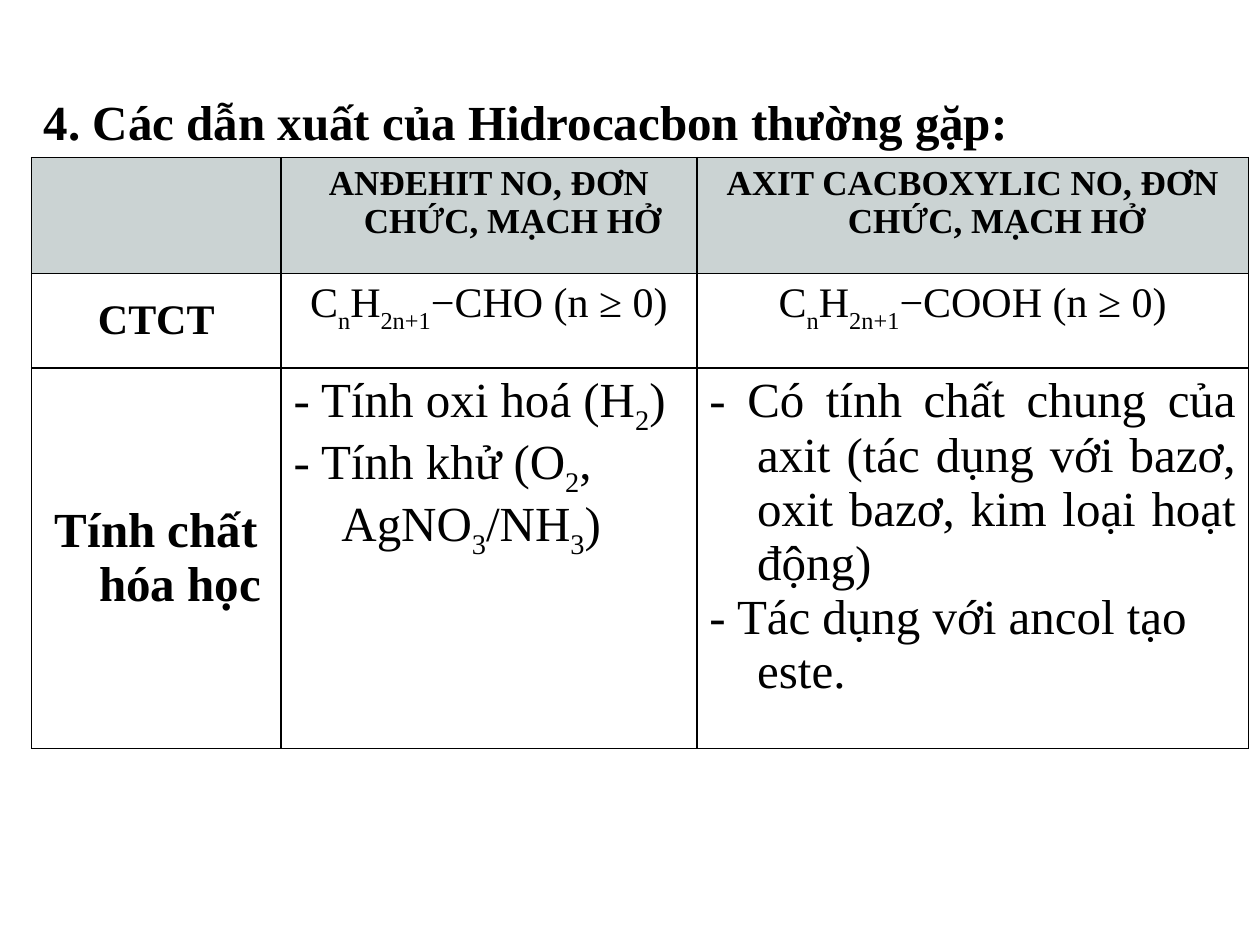
from lxml import etree
from pptx import Presentation
from pptx.dml.color import RGBColor
from pptx.enum.text import MSO_ANCHOR, MSO_AUTO_SIZE, PP_ALIGN
from pptx.oxml.ns import qn
from pptx.util import Inches, Pt

LEFT, CENTER, JUSTIFY = PP_ALIGN.LEFT, PP_ALIGN.CENTER, PP_ALIGN.JUSTIFY
TOP, MIDDLE = MSO_ANCHOR.TOP, MSO_ANCHOR.MIDDLE
FIT_SHAPE = MSO_AUTO_SIZE.SHAPE_TO_FIT_TEXT
FONT = "Times New Roman"
BLACK, HEADER_FILL = "000000", "CBD3D3"
HANGING = Inches(0.38)
COLUMN_WIDTHS = [1.98, 3.3, 4.38]
ROW_HEIGHTS = [0.92, 0.75, 3.02]
ROW_SIZES = [20, 24, 28]
ROW_SUBSCRIPTS = [0, -30, -25]

# Within a line, "|" switches between normal text and subscript.
ROWS = [
    [
        [],
        [(CENTER, "ANĐEHIT NO, ĐƠN CHỨC, MẠCH HỞ")],
        [(CENTER, "AXIT CACBOXYLIC NO, ĐƠN CHỨC, MẠCH HỞ")],
    ],
    [
        [(CENTER, "CTCT")],
        [(CENTER, "C|n|H|2n+1|−CHO (n ≥ 0)")],
        [(CENTER, "C|n|H|2n+1|−COOH (n ≥ 0)")],
    ],
    [
        [(CENTER, "Tính chất hóa học")],
        [
            (LEFT, "- Tính oxi hoá (H|2|)"),
            (LEFT, "- Tính khử (O|2|, AgNO|3|/NH|3|)"),
        ],
        [
            (JUSTIFY, "- Có tính chất chung của axit (tác dụng với bazơ, "
                      "oxit bazơ, kim loại hoạt động)"),
            (LEFT, "- Tác dụng với ancol tạo este."),
        ],
    ],
]


def color(value):
    return RGBColor.from_string(value)


def add_run(paragraph, text, size, bold, baseline=0):
    run = paragraph.add_run()
    run.text = text
    font = run.font
    font.name, font.size, font.bold = FONT, Pt(size), bold
    font.color.rgb = color(BLACK)
    if baseline:
        font._element.set("baseline", str(baseline * 1000))


def add_heading(slide, text):
    heading = slide.shapes.add_textbox(
        Inches(0.25), Inches(0.68), Inches(8.92), Inches(0.57))
    frame = heading.text_frame
    frame.word_wrap = True
    frame.auto_size = FIT_SHAPE
    add_run(frame.paragraphs[0], text, 28, True)


def set_borders(cell):
    properties = cell._tc.get_or_add_tcPr()
    for position, side in enumerate(("lnL", "lnR", "lnT", "lnB")):
        line = etree.Element(qn(f"a:{side}"), w=str(Pt(1)))
        fill = etree.SubElement(line, qn("a:solidFill"))
        etree.SubElement(fill, qn("a:srgbClr"), val=BLACK)
        properties.insert(position, line)


def fill_cell(cell, lines, size, bold, subscript):
    frame = cell.text_frame
    for index, (alignment, text) in enumerate(lines):
        paragraph = frame.add_paragraph() if index else frame.paragraphs[0]
        paragraph.alignment = alignment
        properties = paragraph._p.get_or_add_pPr()
        properties.set("marL", str(HANGING))
        properties.set("indent", str(-HANGING))
        for part, piece in enumerate(text.split("|")):
            add_run(paragraph, piece, size, bold, subscript * (part % 2))


def add_comparison_table(slide):
    table = slide.shapes.add_table(
        len(ROWS), len(COLUMN_WIDTHS), Inches(0.25), Inches(1.25),
        Inches(sum(COLUMN_WIDTHS)), Inches(sum(ROW_HEIGHTS))).table
    table.horz_banding = False
    for column, width in zip(table.columns, COLUMN_WIDTHS):
        column.width = Inches(width)
    for row_index, row in enumerate(ROWS):
        table.rows[row_index].height = Inches(ROW_HEIGHTS[row_index])
        for column_index, lines in enumerate(row):
            cell = table.cell(row_index, column_index)
            is_header, is_label = row_index == 0, column_index == 0
            if is_header:
                cell.fill.solid()
                cell.fill.fore_color.rgb = color(HEADER_FILL)
            else:
                cell.fill.background()
            cell.vertical_anchor = MIDDLE if is_label and lines else TOP
            fill_cell(cell, lines, ROW_SIZES[row_index],
                      is_header or is_label, ROW_SUBSCRIPTS[row_index])
            set_borders(cell)


def main():
    presentation = Presentation()
    presentation.slide_width = Inches(10)
    presentation.slide_height = Inches(7.5)
    slide = presentation.slides.add_slide(presentation.slide_layouts[6])
    add_comparison_table(slide)
    add_heading(slide, "4. Các dẫn xuất của Hidrocacbon thường gặp:")
    presentation.save("out.pptx")


if __name__ == "__main__":
    main()
